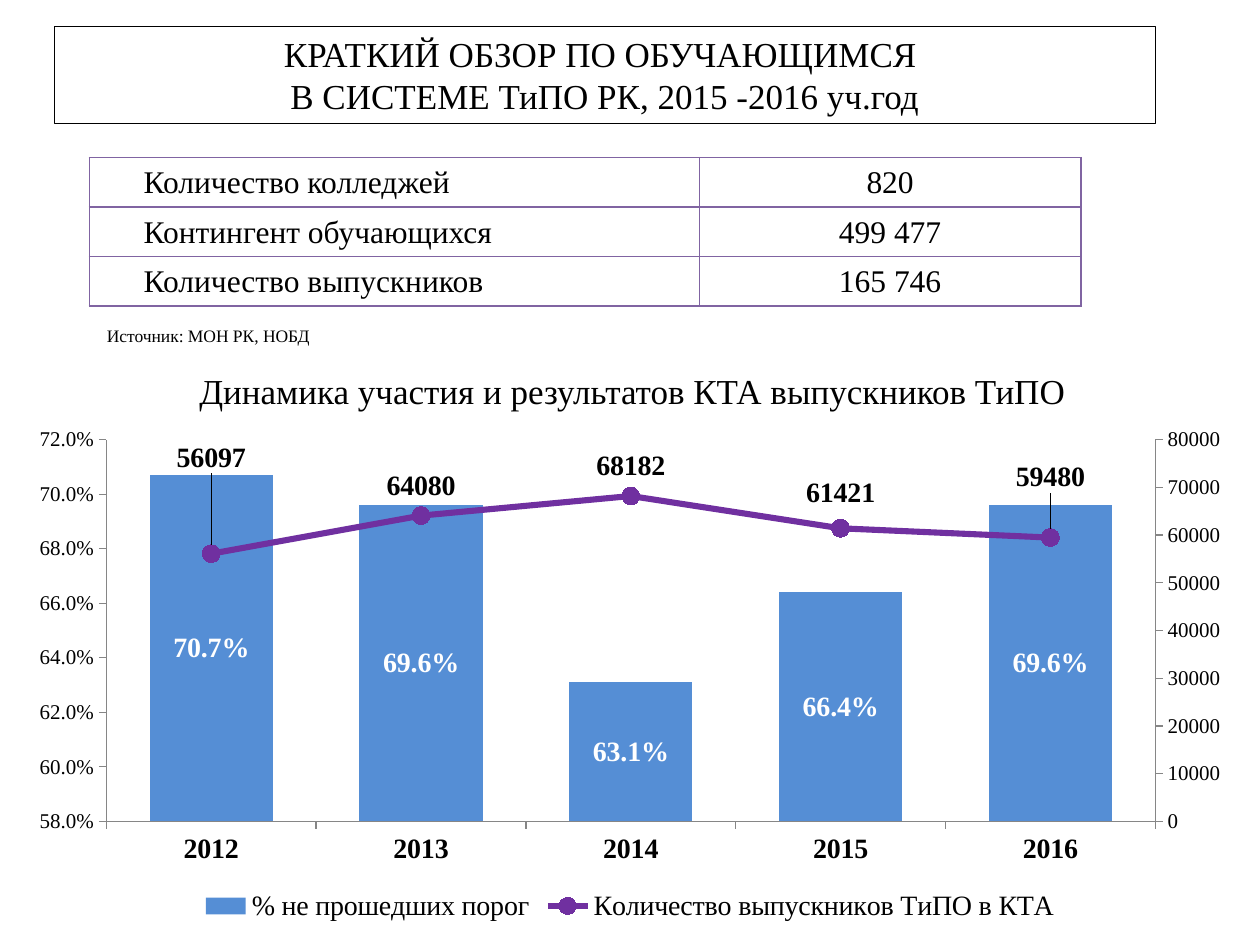
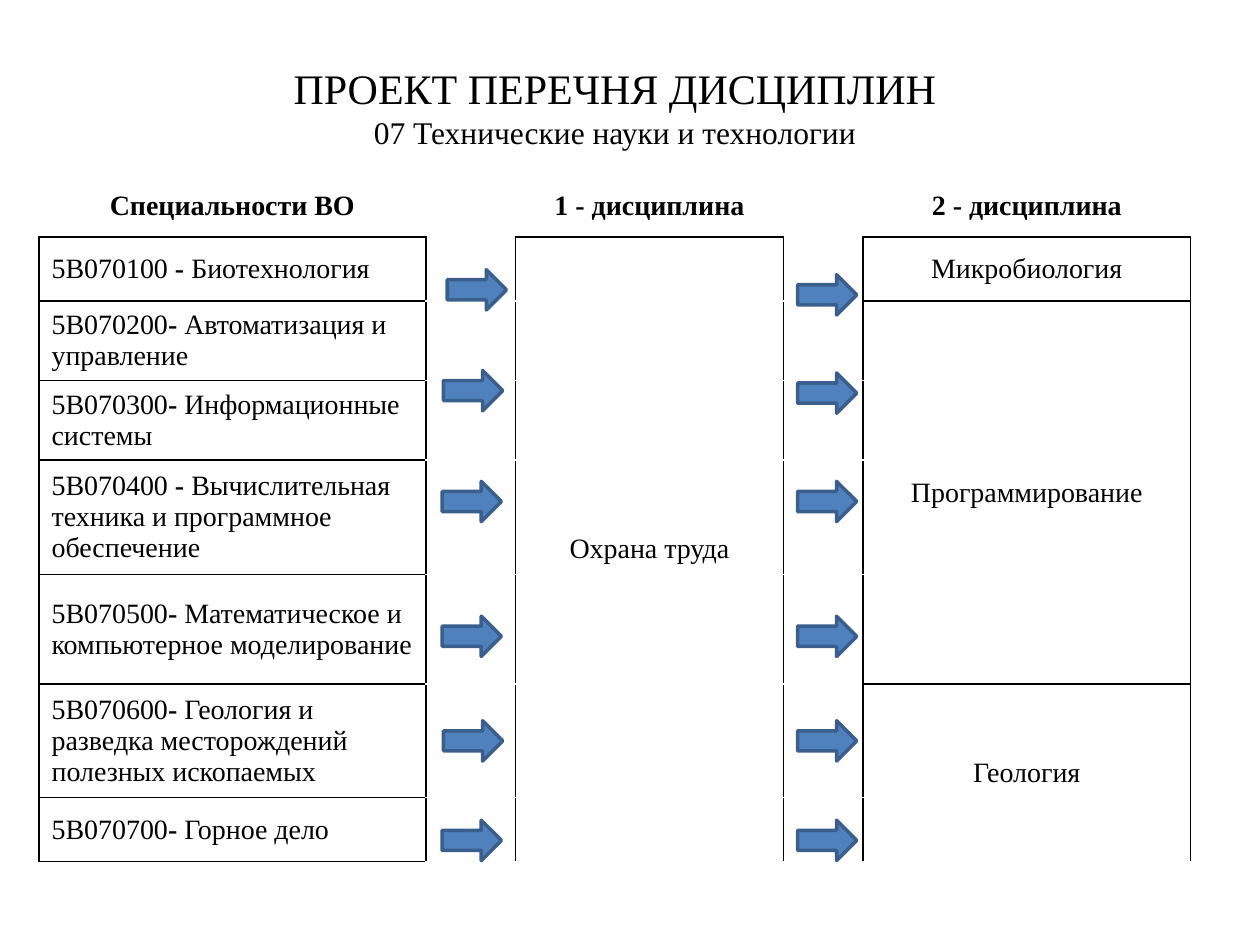
from dataclasses import dataclass

from lxml.etree import SubElement
from pptx import Presentation
from pptx.chart.data import CategoryChartData
from pptx.dml.color import RGBColor
from pptx.enum.chart import (XL_CHART_TYPE, XL_LABEL_POSITION, XL_LEGEND_POSITION,
                             XL_MARKER_STYLE)
from pptx.enum.shapes import MSO_SHAPE
from pptx.enum.text import MSO_ANCHOR, MSO_AUTO_SIZE, PP_ALIGN
from pptx.oxml import parse_xml
from pptx.oxml.ns import nsdecls, qn
from pptx.util import Inches, Pt


@dataclass(frozen=True)
class Theme:
    font: str = "Times New Roman"
    black: str = "000000"
    white: str = "FFFFFF"
    table_line: str = "8064A2"
    bar: str = "558ED5"
    line: str = "7030A0"
    marker: str = "9A2AA6"
    axis: str = "868686"
    arrow: str = "4F81BD"
    arrow_line: str = "3A5F8C"
    headline: int = 24
    title: int = 20
    body: int = 18
    small: int = 16
    axis_size: int = 12
    source: int = 10


T = Theme()


def style(tf, size, align=PP_ALIGN.LEFT, bold=False):
    tf.word_wrap = True
    for p in tf.paragraphs:
        p.alignment = align
        for r in p.runs:
            r.font.name = T.font
            r.font.size = Pt(size)
            r.font.bold = bold
            r.font.color.rgb = RGBColor.from_string(T.black)


def set_borders(cell, left, right, top, bottom):
    """Draw 1 pt borders; a side given as None stays unset."""
    tcPr = cell._tc.get_or_add_tcPr()
    sides = (("a:lnL", left), ("a:lnR", right), ("a:lnT", top), ("a:lnB", bottom))
    for i, (tag, color) in enumerate((t, c) for t, c in sides if c):
        ln = parse_xml(f'<{tag} {nsdecls("a")} w="12700"><a:solidFill>'
                       f'<a:srgbClr val="{color}"/></a:solidFill></{tag}>')
        tcPr.insert(i, ln)


prs = Presentation()
prs.slide_width, prs.slide_height = Inches(10), Inches(7.5)
title_only = prs.slide_layouts[5]

# Slide titles
slides = []
for text, size, box in (
    ("КРАТКИЙ ОБЗОР ПО ОБУЧАЮЩИМСЯ \vВ СИСТЕМЕ ТиПО РК, 2015 -2016 уч.год",
     T.title, (0.43, 0.21, 8.74, 0.77)),
    ("ПРОЕКТ ПЕРЕЧНЯ ДИСЦИПЛИН\n07 Технические науки и технологии",
     T.headline, (0.59, 0.44, 8.58, 0.81)),
):
    s = prs.slides.add_slide(title_only)
    sp = s.shapes.title
    sp.left, sp.top, sp.width, sp.height = map(Inches, box)
    tf = sp.text_frame
    tf.text = text
    tf.auto_size = MSO_AUTO_SIZE.NONE
    tf.vertical_anchor = MSO_ANCHOR.MIDDLE
    style(tf, size, PP_ALIGN.CENTER)
    slides.append(s)
overview, disciplines = slides
overview.shapes.title.line.color.rgb = RGBColor.from_string(T.black)
overview.shapes.title.line.width = Pt(0.75)
disciplines.shapes.title.text_frame.paragraphs[1].runs[0].font.size = Pt(T.body)

# Slide 1: key figures
figures = (("Количество колледжей", "820"),
           ("Контингент обучающихся", "499 477"),
           ("Количество выпускников", "165 746"))
table = overview.shapes.add_table(len(figures), 2, Inches(0.71), Inches(1.25),
                                  Inches(7.87), Inches(1.18)).table
table.first_row = table.horz_banding = False
table.columns[0].width, table.columns[1].width = Inches(4.84), Inches(3.03)
for i, row in enumerate(figures):
    for j, text in enumerate(row):
        cell = table.cell(i, j)
        cell.text = text
        cell.fill.background()
        cell.vertical_anchor = MSO_ANCHOR.MIDDLE
        cell.margin_left = Inches(0.01 if j else 0.43)
        cell.margin_right = cell.margin_top = Inches(0.01)
        cell.margin_bottom = 0
        style(cell.text_frame, T.body, PP_ALIGN.CENTER if j else PP_ALIGN.LEFT)
        set_borders(cell, *[T.table_line] * 4)

# Slide 1: source note and chart heading
for text, size, align, box in (
    ("Источник: МОН РК, НОБД", T.source, PP_ALIGN.LEFT, (0.75, 2.53, 7.88, 0.27)),
    ("Динамика участия и результатов КТА выпускников ТиПО", T.title,
     PP_ALIGN.CENTER, (0.4, 2.88, 9.24, 0.44)),
):
    tf = overview.shapes.add_textbox(*map(Inches, box)).text_frame
    tf.text = text
    style(tf, size, align)

# Slide 1: columns with a line on the right axis
data = CategoryChartData()
data.categories = ["2012", "2013", "2014", "2015", "2016"]
data.add_series("% не прошедших порог", (0.707, 0.696, 0.631, 0.664, 0.696), "0.0%")
data.add_series("Количество выпускников ТиПО в КТА",
                (56097, 64080, 68182, 61421, 59480), "0")
chart = overview.shapes.add_chart(XL_CHART_TYPE.COLUMN_CLUSTERED, Inches(0.12), Inches(3.32),
                                  Inches(9.76), Inches(4.04), data).chart
chart.has_title = False
chart.font.name, chart.font.size = T.font, Pt(T.small)
chart.font.color.rgb = RGBColor.from_string(T.black)
chart.has_legend = True
chart.legend.position = XL_LEGEND_POSITION.BOTTOM
chart.legend.include_in_layout = False

category_axis, value_axis = chart.category_axis, chart.value_axis
category_axis.tick_labels.font.bold = True
value_axis.has_major_gridlines = False
value_axis.minimum_scale, value_axis.maximum_scale = 0.58, 0.72
value_axis.major_unit = 0.02
value_axis.tick_labels.font.size = Pt(T.axis_size)
value_axis.tick_labels.number_format = "0.0%"
value_axis.tick_labels.number_format_is_linked = False
for axis in (category_axis, value_axis):
    axis.format.line.color.rgb = RGBColor.from_string(T.axis)

bar_chart = chart.element.xpath(".//c:barChart")[0]
graduates_ser = bar_chart.findall(qn("c:ser"))[1]
for bar_only in graduates_ser.findall(qn("c:invertIfNegative")):
    graduates_ser.remove(bar_only)
line_chart = parse_xml(
    f'<c:lineChart {nsdecls("c")}><c:grouping val="standard"/><c:varyColors val="0"/>'
    '<c:marker val="1"/><c:axId val="5001"/><c:axId val="5002"/></c:lineChart>')
line_chart.insert(2, graduates_ser)
bar_chart.addnext(line_chart)
right_axes = parse_xml(
    f'<c:plotArea {nsdecls("c", "a")}>'
    '<c:catAx><c:axId val="5001"/><c:scaling><c:orientation val="minMax"/></c:scaling>'
    '<c:delete val="1"/><c:axPos val="b"/><c:crossAx val="5002"/></c:catAx>'
    '<c:valAx><c:axId val="5002"/><c:scaling><c:orientation val="minMax"/>'
    '<c:max val="80000"/><c:min val="0"/></c:scaling><c:delete val="0"/><c:axPos val="r"/>'
    '<c:numFmt formatCode="0" sourceLinked="0"/><c:majorTickMark val="out"/>'
    '<c:minorTickMark val="none"/><c:tickLblPos val="nextTo"/>'
    f'<c:spPr><a:ln><a:solidFill><a:srgbClr val="{T.axis}"/></a:solidFill></a:ln></c:spPr>'
    f'<c:txPr><a:bodyPr/><a:p><a:pPr><a:defRPr sz="{T.axis_size * 100}"/></a:pPr></a:p></c:txPr>'
    '<c:crossAx val="5001"/><c:crosses val="max"/><c:majorUnit val="10000"/></c:valAx>'
    '</c:plotArea>')
last_axis = chart.element.xpath(".//c:valAx")[-1]
for axis in reversed(list(right_axes)):
    last_axis.addnext(axis)

columns, lines = chart.plots
columns.gap_width = 70
columns.vary_by_categories = False
failed, graduates = columns.series[0], lines.series[0]
failed.format.fill.solid()
failed.format.fill.fore_color.rgb = RGBColor.from_string(T.bar)
graduates.smooth = False
graduates.format.line.color.rgb = RGBColor.from_string(T.line)
graduates.format.line.width = Pt(3.5)
marker = graduates.marker
marker.style, marker.size = XL_MARKER_STYLE.CIRCLE, 10
marker.format.fill.solid()
marker.format.fill.fore_color.rgb = RGBColor.from_string(T.marker)
marker.format.line.color.rgb = RGBColor.from_string(T.line)
for series, position, color, number_format in (
    (failed, XL_LABEL_POSITION.CENTER, T.white, "0.0%"),
    (graduates, XL_LABEL_POSITION.ABOVE, T.black, "0"),
):
    labels = series.data_labels
    labels.show_value = True
    labels.position = position
    labels.number_format, labels.number_format_is_linked = number_format, False
    labels.font.bold, labels.font.size = True, Pt(T.small)
    labels.font.color.rgb = RGBColor.from_string(color)

# Labels lifted clear of the columns
for point, (dx, dy) in {0: (0, -0.13), 3: (0, -0.01), 4: (0, -0.06)}.items():
    label = graduates.points[point].data_label
    label.position = XL_LABEL_POSITION.ABOVE
    label.font.bold, label.font.size = True, Pt(T.small)
    idx = graduates_ser.xpath(f"c:dLbls/c:dLbl/c:idx[@val='{point}']")[0]
    layout = parse_xml(f'<c:layout {nsdecls("c")}><c:manualLayout/></c:layout>')
    for tag, value in (("c:x", dx), ("c:y", dy)):
        SubElement(layout[0], qn(tag)).set("val", str(value))
    idx.addnext(layout)

# Slide 2: specialities and their disciplines
headers = {0: "Специальности ВО", 2: "1 - дисциплина", 4: "2 - дисциплина"}
specialities = (("5B070100", " - ", "Биотехнология"),
                ("5B070200", "- ", "Автоматизация и управление"),
                ("5B070300", "- ", "Информационные системы"),
                ("5B070400", " - ", "Вычислительная техника и программное обеспечение"),
                ("5B070500", "- ", "Математическое и компьютерное моделирование"),
                ("5B070600", "- ", "Геология и разведка месторождений полезных ископаемых"),
                ("5B070700", "- ", "Горное дело"))
spans = ((2, 1, 7, "Охрана труда"), (4, 1, 1, "Микробиология"),
         (4, 2, 5, "Программирование"), (4, 6, 7, "Геология"))
widths = (3.07, 0.71, 2.13, 0.63, 2.6)
heights = (0.49, 0.51, 0.63, 0.63, 0.91, 0.87, 0.9, 0.51)
table = disciplines.shapes.add_table(len(heights), len(widths), Inches(0.31), Inches(1.39),
                                     Inches(sum(widths)), Inches(sum(heights))).table
table.first_row = table.horz_banding = False
for column, width in zip(table.columns, widths):
    column.width = Inches(width)
for row, height in zip(table.rows, heights):
    row.height = Inches(height)
    for cell in row.cells:
        cell.fill.background()
        cell.vertical_anchor = MSO_ANCHOR.MIDDLE

for j in range(len(widths)):
    cell = table.cell(0, j)
    cell.text = headers.get(j, "")
    style(cell.text_frame, T.small, PP_ALIGN.CENTER, True)
    set_borders(cell, T.white, T.white, T.white, T.black if j in headers else T.white)

for i, speciality in enumerate(specialities, 1):
    cell = table.cell(i, 0)
    p = cell.text_frame.paragraphs[0]
    for text in speciality:
        p.add_run().text = text
    style(cell.text_frame, T.small)
    p.runs[1].font.bold = True
    set_borders(cell, *[T.black] * 4)
    for gap in (1, 3):
        set_borders(table.cell(i, gap), T.black, T.black, T.white, T.white)

for j, first, last, text in spans:
    for i in range(first, last + 1):
        set_borders(table.cell(i, j), T.black, T.black,
                    T.black if i == first else None, T.black if i == last else None)
    cell = table.cell(first, j)
    cell.text = text
    style(cell.text_frame, T.small, PP_ALIGN.CENTER)
    if last > first:
        cell.merge(table.cell(last, j))

# Slide 2: arrows between the columns
left_arrows = ((3.55, 2.14), (3.52, 2.94), (3.51, 3.82), (3.51, 4.89), (3.52, 5.72), (3.51, 6.51))
right_arrows = [(6.33, y) for y in (2.18, 2.96, 3.82, 4.89, 5.72, 6.51)]
for x, y in (*left_arrows, *right_arrows):
    sp = disciplines.shapes.add_shape(MSO_SHAPE.RIGHT_ARROW, Inches(x), Inches(y),
                                      Inches(0.47), Inches(0.32))
    sp.shadow.inherit = False
    sp.fill.solid()
    sp.fill.fore_color.rgb = RGBColor.from_string(T.arrow)
    sp.line.color.rgb = RGBColor.from_string(T.arrow_line)
    sp.line.width = Pt(2)

prs.save("out.pptx")
